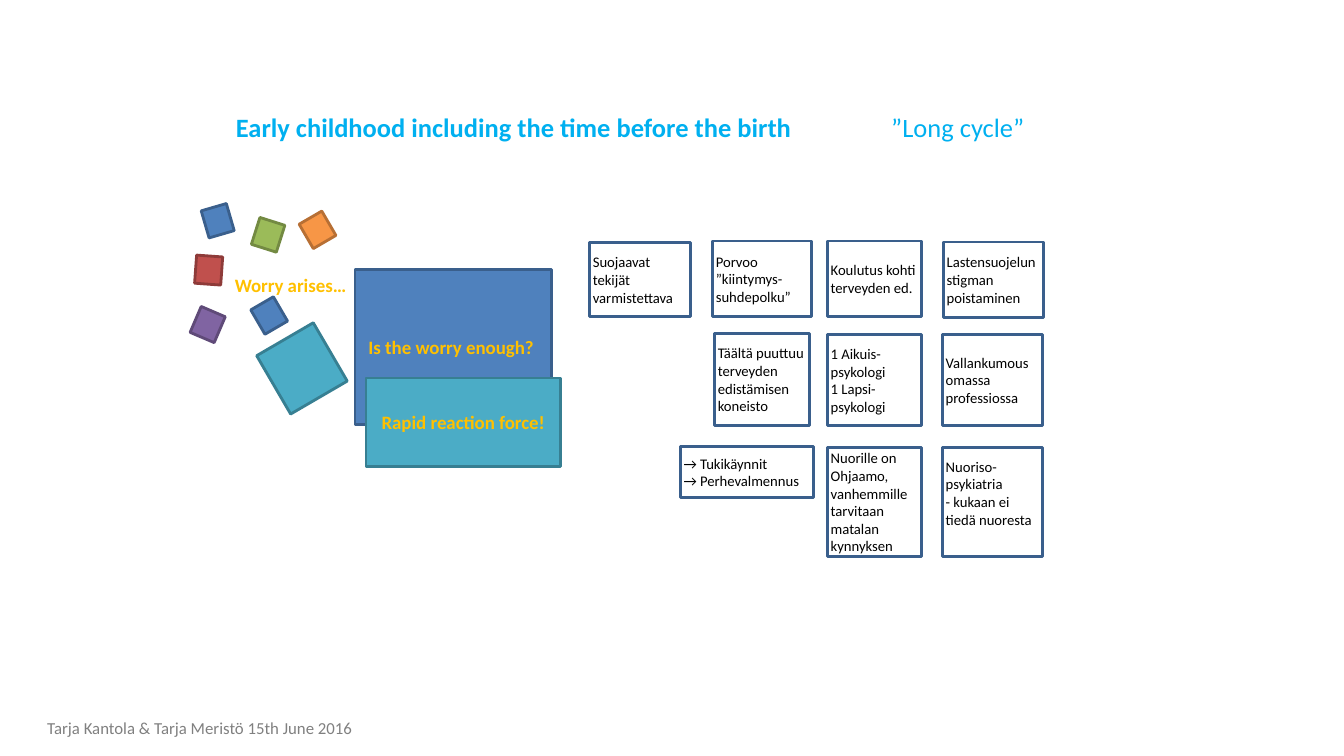
import pptx
import pptx.util
import pptx.dml.color
import pptx.enum.shapes
import pptx.enum.text

Inches = pptx.util.Inches
Pt = pptx.util.Pt
RGBColor = pptx.dml.color.RGBColor
ALIGN = pptx.enum.text.PP_ALIGN
MIDDLE = pptx.enum.text.MSO_ANCHOR.MIDDLE
FIT = pptx.enum.text.MSO_AUTO_SIZE

BLACK = RGBColor(0x00, 0x00, 0x00)
GREY = RGBColor(0x80, 0x80, 0x80)
SKY = RGBColor(0x00, 0xB0, 0xF0)
GOLD = RGBColor(0xFF, 0xC0, 0x00)
BLUE = RGBColor(0x4F, 0x81, 0xBD)
NAVY = RGBColor(0x3A, 0x5F, 0x8C)
RED = RGBColor(0xC0, 0x50, 0x4D)
MAROON = RGBColor(0x8E, 0x3B, 0x39)
GREEN = RGBColor(0x9B, 0xBB, 0x59)
OLIVE = RGBColor(0x73, 0x8A, 0x42)
PURPLE = RGBColor(0x80, 0x64, 0xA2)
PLUM = RGBColor(0x5F, 0x4A, 0x78)
ORANGE = RGBColor(0xF7, 0x96, 0x46)
BROWN = RGBColor(0xB7, 0x6F, 0x34)
AQUA = RGBColor(0x4B, 0xAC, 0xC6)
TEAL = RGBColor(0x37, 0x7F, 0x92)

deck = pptx.Presentation()
deck.slide_width = Inches(13.33)
deck.slide_height = Inches(7.5)
slide = deck.slides.add_slide(deck.slide_layouts[5])


def add_box(left, top, width, height, fill, edge, turn=0):
    box = slide.shapes.add_shape(
        pptx.enum.shapes.MSO_SHAPE.RECTANGLE,
        Inches(left), Inches(top), Inches(width), Inches(height))
    box.shadow.inherit = False
    box.rotation = turn
    if fill is None:
        box.fill.background()
    else:
        box.fill.solid()
        box.fill.fore_color.rgb = fill
    box.line.color.rgb = edge
    box.line.width = Pt(2)
    return box


def write(shape, text, size, color, bold=False, align=ALIGN.LEFT):
    frame = shape.text_frame
    frame.text = text
    for para in frame.paragraphs:
        para.alignment = align
        para.font.name = "Calibri"
        para.font.size = Pt(size)
        para.font.bold = bold
        para.font.color.rgb = color


title = slide.shapes.title
title.left, title.top = Inches(1.94), Inches(0.94)
title.width, title.height = Inches(8.62), Inches(0.63)
title.text_frame.auto_size = FIT.NONE
title.text_frame.vertical_anchor = MIDDLE
write(title, "Early childhood including the time before the birth \t\t",
      18.9, SKY, True, ALIGN.CENTER)
cycle = title.text_frame.paragraphs[0].add_run()
cycle.text = "”Long cycle”"
cycle.font.bold = False

notes = [
    (7.07, 2.39, 0.98, 0.75, "Porvoo ”kiintymys-suhdepolku”"),
    (9.36, 2.4, 0.99, 0.75, "Lastensuojelun stigman poistaminen"),
    (5.85, 2.41, 1, 0.73, "Suojaavat tekijät varmistettava"),
    (7.09, 3.31, 0.94, 0.91, "Täältä puuttuu terveyden edistämisen koneisto"),
    (8.21, 2.39, 0.93, 0.75, "Koulutus kohti terveyden ed."),
    (8.21, 3.32, 0.93, 0.9, "1 Aikuis-psykologi\n1 Lapsi-psykologi"),
    (9.35, 3.32, 0.99, 0.9, "Vallankumous omassa professiossa"),
    (6.75, 4.43, 1.32, 0.51, "→ Tukikäynnit\n→ Perhevalmennus"),
    (8.21, 4.44, 0.93, 1.08,
     "Nuorille on Ohjaamo, vanhemmille tarvitaan matalan kynnyksen"),
    (9.35, 4.44, 0.99, 1.08, "Nuoriso-psykiatria\v- kukaan ei tiedä nuoresta"),
]
for left, top, width, height, text in notes:
    note = add_box(left, top, width, height, None, NAVY)
    frame = note.text_frame
    frame.margin_left = frame.margin_right = Inches(0.03)
    frame.margin_top = frame.margin_bottom = Inches(0.03)
    frame.vertical_anchor = MIDDLE
    write(note, text, 10.5, BLACK)
frame.margin_bottom = Inches(0.21)

cubes = [
    (2.03, 2.05, 343.8, BLUE, NAVY),
    (1.94, 2.54, 4.1, RED, MAROON),
    (2.53, 2.19, 17.6, GREEN, OLIVE),
    (1.93, 3.08, 23.2, PURPLE, PLUM),
    (2.54, 2.99, 329.8, BLUE, NAVY),
    (3.02, 2.14, 329.8, ORANGE, BROWN),
]
for left, top, turn, fill, edge in cubes:
    add_box(left, top, 0.26, 0.28, fill, edge, turn)

worry = slide.shapes.add_textbox(
    Inches(2.23), Inches(2.67), Inches(1.35), Inches(0.33))
worry.text_frame.word_wrap = False
worry.text_frame.auto_size = FIT.SHAPE_TO_FIT_TEXT
write(worry, "Worry arises…", 13.5, GOLD, True)

enough = add_box(3.52, 2.67, 1.95, 1.54, BLUE, NAVY)
write(enough, "Is the worry enough? ", 13.5, GOLD, True, ALIGN.CENTER)
add_box(2.67, 3.32, 0.65, 0.67, AQUA, TEAL, 329.8)
rapid = add_box(3.63, 3.75, 1.93, 0.88, AQUA, TEAL)
write(rapid, "Rapid reaction force!", 13.5, GOLD, True, ALIGN.CENTER)

credit = slide.shapes.add_textbox(
    Inches(0.37), Inches(7.07), Inches(5.63), Inches(0.43))
credit.text_frame.word_wrap = True
write(credit, "Tarja Kantola & Tarja Meristö 15th June 2016", 12, GREY)

deck.save("out.pptx")
